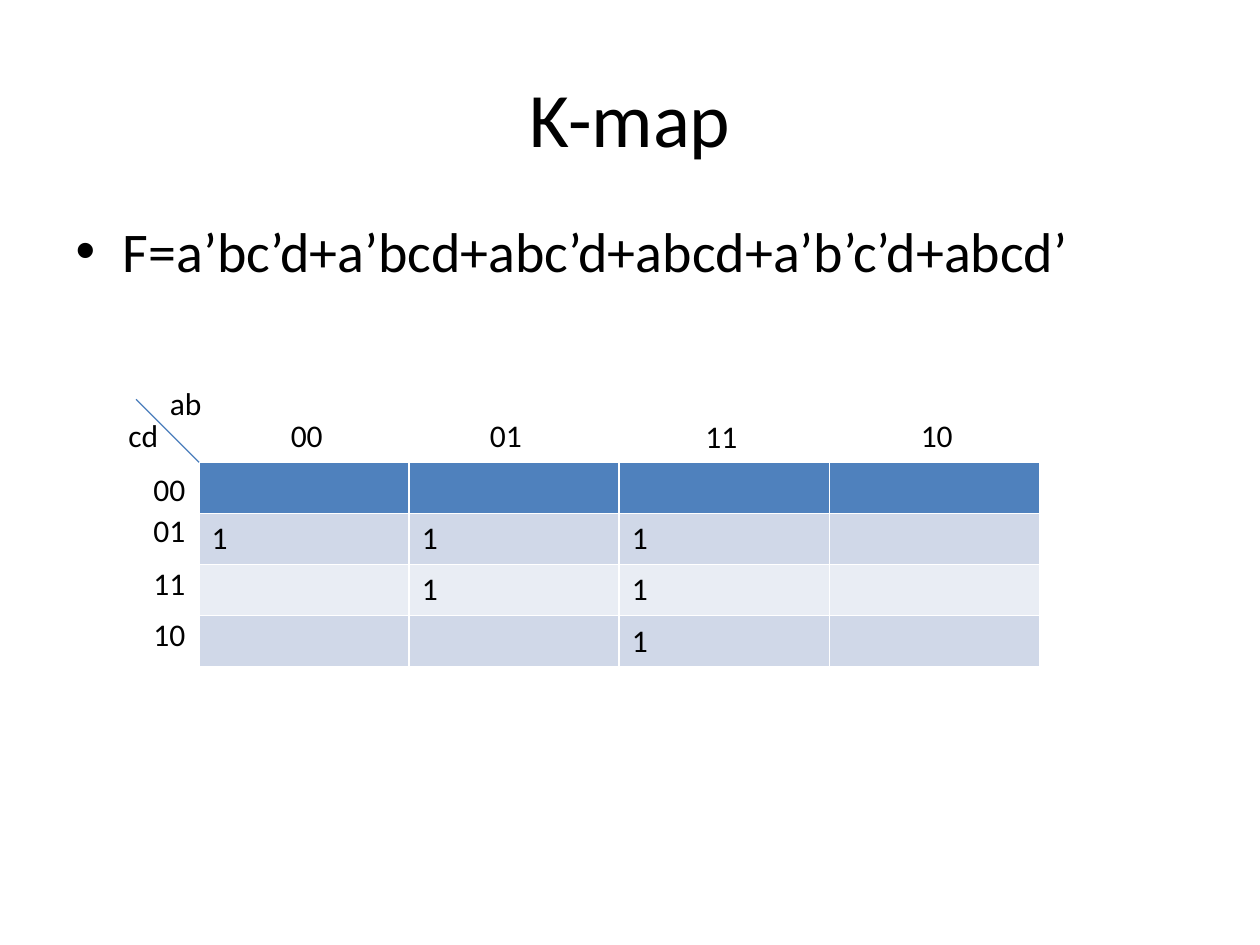
from dataclasses import dataclass

from pptx import Presentation
from pptx.dml.color import RGBColor
from pptx.enum.shapes import MSO_CONNECTOR
from pptx.enum.text import MSO_ANCHOR, MSO_AUTO_SIZE, PP_ALIGN
from pptx.oxml.ns import qn
from pptx.util import Inches, Pt

STRAIGHT = MSO_CONNECTOR.STRAIGHT
MIDDLE = MSO_ANCHOR.MIDDLE
CENTER = PP_ALIGN.CENTER
FIT_SHAPE = MSO_AUTO_SIZE.SHAPE_TO_FIT_TEXT


@dataclass(frozen=True)
class Theme:
    font: str = "Calibri"
    text: str = "000000"
    header: str = "4F81BD"
    bands: tuple = ("D0D8E8", "E9EDF4")
    line: str = "4B7EBC"
    title_size: int = 44
    body_size: int = 32
    label_size: int = 18
    line_width: float = 0.75


def set_attributes(target, values):
    for name, value in values.items():
        setattr(target, name, value)


def place(shape, left, top, width, height):
    set_attributes(shape, {
        "left": Inches(left), "top": Inches(top),
        "width": Inches(width), "height": Inches(height),
    })


class SlideBuilder:
    def __init__(self, presentation, theme):
        self.theme = theme
        self.slide = presentation.slides.add_slide(presentation.slide_layouts[1])

    def add_text(self, paragraph, text, size):
        run = paragraph.add_run()
        run.text = text
        set_attributes(run.font, {"name": self.theme.font, "size": Pt(size)})
        run.font.color.rgb = RGBColor.from_string(self.theme.text)

    def title(self, text, box):
        shape = self.slide.shapes.title
        place(shape, *box)
        shape.text_frame.vertical_anchor = MIDDLE
        paragraph = shape.text_frame.paragraphs[0]
        paragraph.alignment = CENTER
        self.add_text(paragraph, text, self.theme.title_size)

    def body(self, text, box):
        shape = self.slide.placeholders[1]
        place(shape, *box)
        self.add_text(shape.text_frame.paragraphs[0], text, self.theme.body_size)

    def label(self, text, left, top, width=0.46, height=0.4):
        shape = self.slide.shapes.add_textbox(
            *map(Inches, (left, top, width, height)))
        set_attributes(shape.text_frame,
                       {"word_wrap": False, "auto_size": FIT_SHAPE})
        self.add_text(shape.text_frame.paragraphs[0], text, self.theme.label_size)

    def line(self, start, end):
        connector = self.slide.shapes.add_connector(
            STRAIGHT, *map(Inches, start + end))
        connector.line.width = Pt(self.theme.line_width)
        connector.line.color.rgb = RGBColor.from_string(self.theme.line)
        properties = connector._element.spPr
        properties.append(properties.makeelement(qn("a:effectLst"), {}))

    def table(self, rows, box):
        """Fill the header and alternating bands; the table style draws borders."""
        table = self.slide.shapes.add_table(
            len(rows), len(rows[0]), *map(Inches, box)).table
        for row_index, values in enumerate(rows):
            color = (self.theme.bands[(row_index - 1) % 2] if row_index
                     else self.theme.header)
            for column_index, value in enumerate(values):
                cell = table.cell(row_index, column_index)
                cell.fill.solid()
                cell.fill.fore_color.rgb = RGBColor.from_string(color)
                if value:
                    self.add_text(cell.text_frame.paragraphs[0], value,
                                  self.theme.label_size)


def main():
    presentation = Presentation()
    set_attributes(presentation, {"slide_width": Inches(10),
                                  "slide_height": Inches(7.5)})
    builder = SlideBuilder(presentation, Theme())
    builder.title("K-map", (0.5, 0.3, 9, 1.25))
    builder.body("F=a’bc’d+a’bcd+abc’d+abcd+a’b’c’d+abcd’",
                 (0.5, 1.67, 9, 4.95))
    builder.table([
        ["", "", "", ""],
        ["1", "1", "1", ""],
        ["", "1", "1", ""],
        ["", "", "1", ""],
    ], (1.58, 3.67, 6.67, 1.62))

    gray_code = ("00", "01", "11", "10")
    column_places = ((2.21, 3.25), (3.79, 3.25), (5.5, 3.26), (7.21, 3.25))
    row_tops = (3.68, 4.01, 4.43, 4.83)
    for code, column_place, row_top in zip(gray_code, column_places, row_tops):
        builder.label(code, *column_place)
        builder.label(code, 1.12, row_top)

    builder.line((1.08, 3.17), (1.58, 3.67))
    builder.label("ab", 1.25, 3)
    builder.label("cd", 0.92, 3.25, width=0.44)
    presentation.save("out.pptx")


if __name__ == "__main__":
    main()
